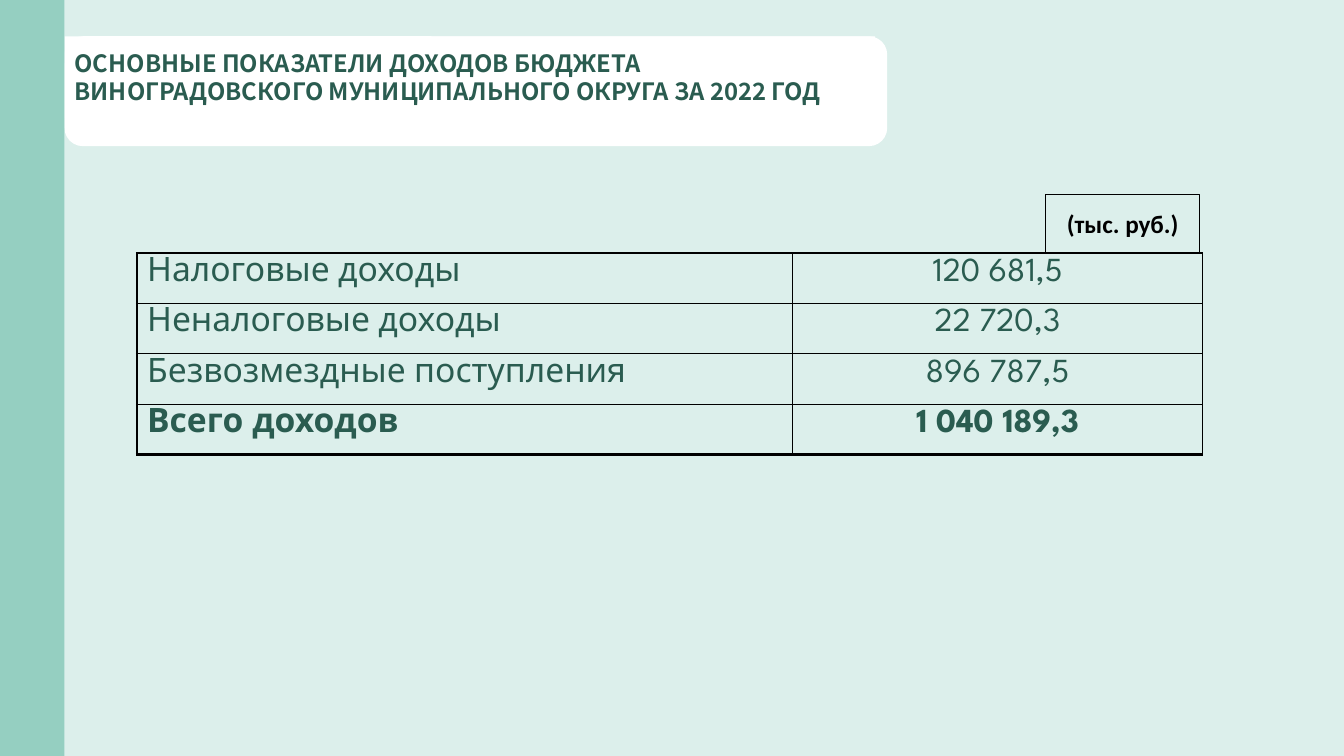
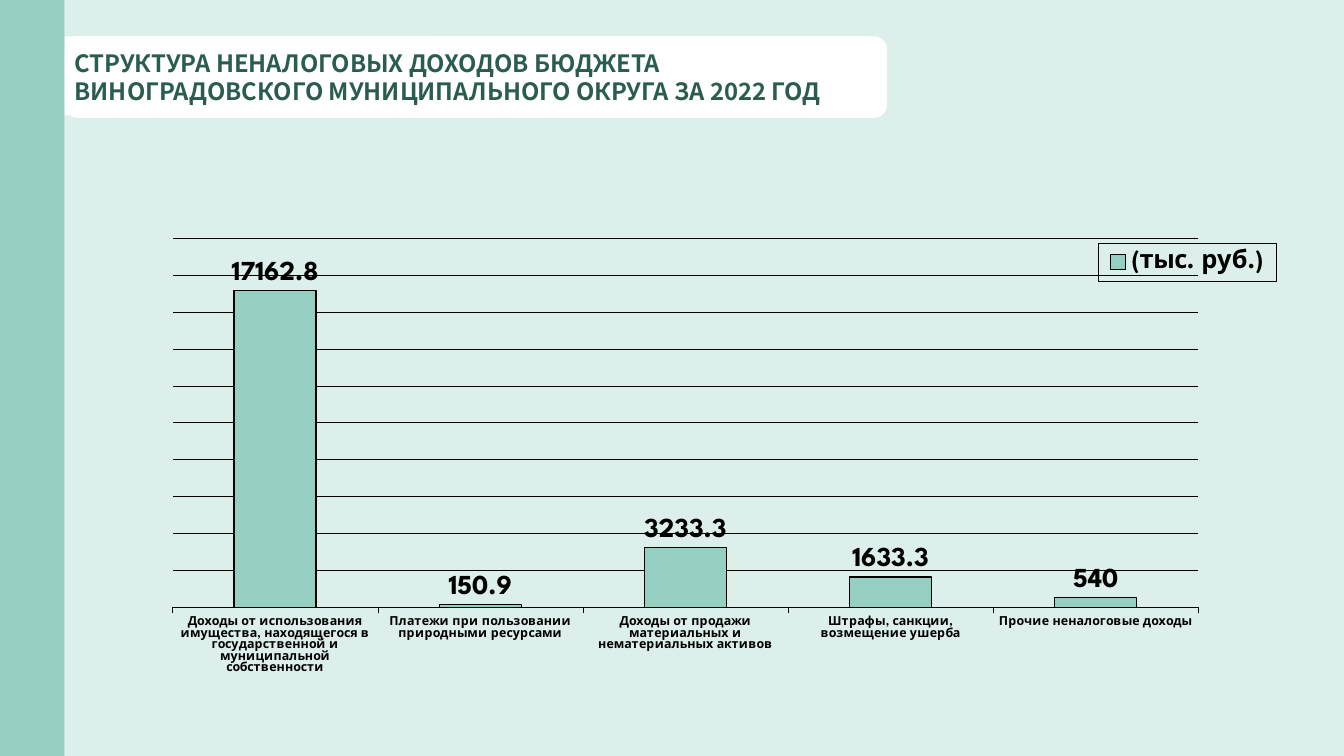
from dataclasses import dataclass

from lxml import etree
from pptx import Presentation
from pptx.chart.data import CategoryChartData
from pptx.dml.color import RGBColor
from pptx.enum.chart import XL_CHART_TYPE, XL_LABEL_POSITION, XL_LEGEND_POSITION
from pptx.enum.chart import XL_TICK_LABEL_POSITION, XL_TICK_MARK
from pptx.enum.shapes import MSO_SHAPE
from pptx.enum.text import MSO_ANCHOR, MSO_AUTO_SIZE, PP_ALIGN
from pptx.oxml import parse_xml
from pptx.oxml.ns import nsdecls, qn
from pptx.util import Inches, Pt

RECT, ROUND = MSO_SHAPE.RECTANGLE, MSO_SHAPE.ROUNDED_RECTANGLE
LEFT, CENTER = PP_ALIGN.LEFT, PP_ALIGN.CENTER
TOP, MIDDLE = MSO_ANCHOR.TOP, MSO_ANCHOR.MIDDLE
NO_FIT = MSO_AUTO_SIZE.NONE
COLUMN = XL_CHART_TYPE.COLUMN_CLUSTERED
OUTER = XL_LABEL_POSITION.OUTSIDE_END
RIGHT = XL_LEGEND_POSITION.RIGHT
LOW = XL_TICK_LABEL_POSITION.LOW
OUT, NONE = XL_TICK_MARK.OUTSIDE, XL_TICK_MARK.NONE

PALE = RGBColor(0xDC, 0xEF, 0xEB)
MINT = RGBColor(0x95, 0xCF, 0xC1)
GREEN = RGBColor(0x2A, 0x5C, 0x50)
WHITE = RGBColor(0xFF, 0xFF, 0xFF)
BLACK = RGBColor(0, 0, 0)

HEAD_FONT, BODY_FONT, UNIT_FONT = "Noto Sans CJK JP", "League Spartan", "Calibri"
UNIT = "(тыс. руб.)"
WIDTH, HEIGHT = 13.33, 7.5
BAND, HEAD_TOP = 0.64, 0.36
THIN, THICK, HAIR = 1, 2.25, 0.27


@dataclass(frozen=True)
class Head:
    lines: tuple[str, ...]
    wide: float
    high: float
    card: float  # height of the rounded card


@dataclass(frozen=True)
class Item:
    name: str
    value: str
    bold: bool = False


@dataclass(frozen=True)
class Bar:
    name: str
    value: float


TABLE_HEAD = Head(
    ("ОСНОВНЫЕ ПОКАЗАТЕЛИ ДОХОДОВ БЮДЖЕТА ВИНОГРАДОВСКОГО МУНИЦИПАЛЬНОГО ОКРУГА ЗА 2022 ГОД",),
    8.04, 0.81, 1.09)
CHART_HEAD = Head(
    ("СТРУКТУРА НЕНАЛОГОВЫХ ДОХОДОВ БЮДЖЕТА",
     "ВИНОГРАДОВСКОГО МУНИЦИПАЛЬНОГО ОКРУГА ЗА 2022 ГОД"),
    8, 0.78, 0.81)
ITEMS = (
    Item("Налоговые доходы", "120 681,5"),
    Item("Неналоговые доходы", "22 720,3"),
    Item("Безвозмездные поступления", "896 787,5"),
    Item("Всего доходов", "1 040 189,3", True),
)
BARS = (
    Bar("Доходы от использования имущества, находящегося в государственной "
        "и муниципальной собственности", 17162.8),
    Bar("Платежи при пользовании природными ресурсами", 150.9),
    Bar("Доходы от продажи материальных и нематериальных активов", 3233.3),
    Bar("Штрафы, санкции, возмещение ушерба", 1633.3),
    Bar("Прочие неналоговые доходы", 540),
)


def style(font, face: str, size: float, color: RGBColor, bold: bool = True) -> None:
    font.name, font.size, font.bold = face, Pt(size), bold
    font.color.rgb = color


def stroke(line, width: float) -> None:
    line.color.rgb = BLACK
    line.width = Pt(width)


def add_box(slide, kind, left: float, top: float, wide: float, high: float,
            fill: RGBColor | None = None):
    box = slide.shapes.add_shape(kind, Inches(left), Inches(top), Inches(wide), Inches(high))
    box.shadow.inherit = False
    box.line.fill.background()
    if fill is None:
        box.fill.background()
    else:
        box.fill.solid()
        box.fill.fore_color.rgb = fill
    return box


def add_page(deck, head: Head):
    """Add a slide with the side band, the white card and the title."""
    slide = deck.slides.add_slide(deck.slide_layouts[5])
    add_box(slide, RECT, 0, 0, BAND, HEIGHT, MINT)
    card = add_box(slide, ROUND, BAND, HEAD_TOP, 8.16, head.card, WHITE)

    title = slide.shapes.title
    title.element.addprevious(card.element)  # card goes behind the title
    title.left, title.top = Inches(BAND), Inches(HEAD_TOP)
    title.width, title.height = Inches(head.wide), Inches(head.high)
    title.fill.solid()
    title.fill.fore_color.rgb = WHITE

    frame = title.text_frame
    frame.word_wrap, frame.auto_size = True, NO_FIT
    frame.vertical_anchor = TOP
    frame.margin_left = frame.margin_right = Inches(0.1)
    frame.margin_top, frame.margin_bottom = Inches(0.13), Inches(0.05)
    para = frame.paragraphs[0]
    para.alignment, para.line_spacing = LEFT, Pt(20)
    for i, text in enumerate(head.lines):
        if i:
            para.add_line_break()
        run = para.add_run()
        run.text = text
        style(run.font, HEAD_FONT, 17, GREEN)
    return slide


def set_edges(cell, left: float, low: float) -> None:
    """Draw the four borders of a cell, widths in points."""
    props = cell._tc.get_or_add_tcPr()
    for side, width in (("L", left), ("R", THIN), ("T", THIN), ("B", low)):
        props.append(parse_xml(
            f'<a:ln{side} {nsdecls("a")} w="{int(Pt(width))}"><a:solidFill>'
            f'<a:srgbClr val="{BLACK}"/></a:solidFill></a:ln{side}>'))


def add_grid(slide) -> None:
    cols, step = (6.5, 4.07), 0.5
    grid = slide.shapes.add_table(
        len(ITEMS), len(cols), Inches(1.36), Inches(2.51),
        Inches(sum(cols)), Inches(step * len(ITEMS))).table
    grid.first_row = grid.horz_banding = False
    for col, wide in zip(grid.columns, cols):
        col.width = Inches(wide)
    for r, item in enumerate(ITEMS):
        grid.rows[r].height = Inches(step)
        low = THICK if r == len(ITEMS) - 1 else THIN
        for c, text in enumerate((item.name, item.value)):
            cell = grid.cell(r, c)
            set_edges(cell, THIN if c else THICK, low)
            cell.fill.background()
            para = cell.text_frame.paragraphs[0]
            para.alignment = CENTER if c else LEFT
            para.space_after = Pt(6)
            run = para.add_run()
            run.text = text
            style(run.font, BODY_FONT, 24, GREEN, item.bold)


def add_unit(slide) -> None:
    box = add_box(slide, RECT, 10.37, 1.93, 1.53, 0.58)
    stroke(box.line, THIN)
    frame = box.text_frame
    frame.word_wrap, frame.vertical_anchor = True, MIDDLE
    para = frame.paragraphs[0]
    para.alignment = CENTER
    run = para.add_run()
    run.text = UNIT
    style(run.font, UNIT_FONT, 18, BLACK)


def set_place(node, index: int, inner: bool, **place: float) -> None:
    """Fix a chart part at fractions of the chart area."""
    for old in node.findall(qn("c:layout")):
        node.remove(old)
    layout = etree.Element(qn("c:layout"))
    manual = etree.SubElement(layout, qn("c:manualLayout"))
    marks = {"layoutTarget": "inner"} if inner else {}
    marks |= {"xMode": "edge", "yMode": "edge"}
    for key, value in (marks | place).items():
        etree.SubElement(manual, qn(f"c:{key}")).set("val", str(value))
    node.insert(index, layout)


def add_bars(slide) -> None:
    data = CategoryChartData()
    data.categories = [bar.name for bar in BARS]
    data.add_series(UNIT, [bar.value for bar in BARS])
    chart = slide.shapes.add_chart(
        COLUMN, Inches(1.71), Inches(2.36), Inches(11.06), Inches(4.76), data).chart
    chart.has_title = False
    style(chart.font, BODY_FONT, 19.6, BLACK)

    # Columns and their values
    plot = chart.plots[0]
    plot.gap_width, plot.vary_by_categories = 150, False
    form = plot.series[0].format
    form.fill.solid()
    form.fill.fore_color.rgb = MINT
    stroke(form.line, 1.09)
    plot.has_data_labels = True
    labels = plot.data_labels
    labels.show_value, labels.position = True, OUTER
    style(labels.font, BODY_FONT, 19.6, BLACK)

    # Axes
    names = chart.category_axis
    names.tick_label_position = LOW
    names.major_tick_mark, names.minor_tick_mark = OUT, NONE
    stroke(names.format.line, HAIR)
    style(names.tick_labels.font, BODY_FONT, 8.9, BLACK)
    scale = chart.value_axis
    scale.minimum_scale, scale.maximum_scale, scale.major_unit = 0, 20000, 2000
    scale.has_major_gridlines = True
    stroke(scale.major_gridlines.format.line, HAIR)
    scale.visible = False

    # Legend with a thin frame
    chart.has_legend = True
    legend = chart.legend
    legend.position, legend.include_in_layout = RIGHT, False
    style(legend.font, BODY_FONT, 18.1, BLACK)
    root = chart.element
    node = root.find(f".//{qn('c:legend')}")
    node.find(qn("c:overlay")).addnext(parse_xml(
        f'<c:spPr {nsdecls("c", "a")}><a:noFill/><a:ln w="{int(Pt(HAIR))}"><a:solidFill>'
        f'<a:srgbClr val="{BLACK}"/></a:solidFill></a:ln></c:spPr>'))
    set_place(node, 1, False, x=0.83, y=0.01, w=0.16, h=0.08)
    set_place(root.find(f".//{qn('c:plotArea')}"), 0, True, x=0, y=0, w=0.92, h=0.77)


def main() -> None:
    deck = Presentation()
    deck.slide_width, deck.slide_height = Inches(WIDTH), Inches(HEIGHT)
    back = deck.slide_master.background.fill
    back.solid()
    back.fore_color.rgb = PALE

    # Revenue table
    slide = add_page(deck, TABLE_HEAD)
    add_grid(slide)
    add_unit(slide)

    # Non-tax revenue chart
    add_bars(add_page(deck, CHART_HEAD))
    deck.save("out.pptx")


if __name__ == "__main__":
    main()
